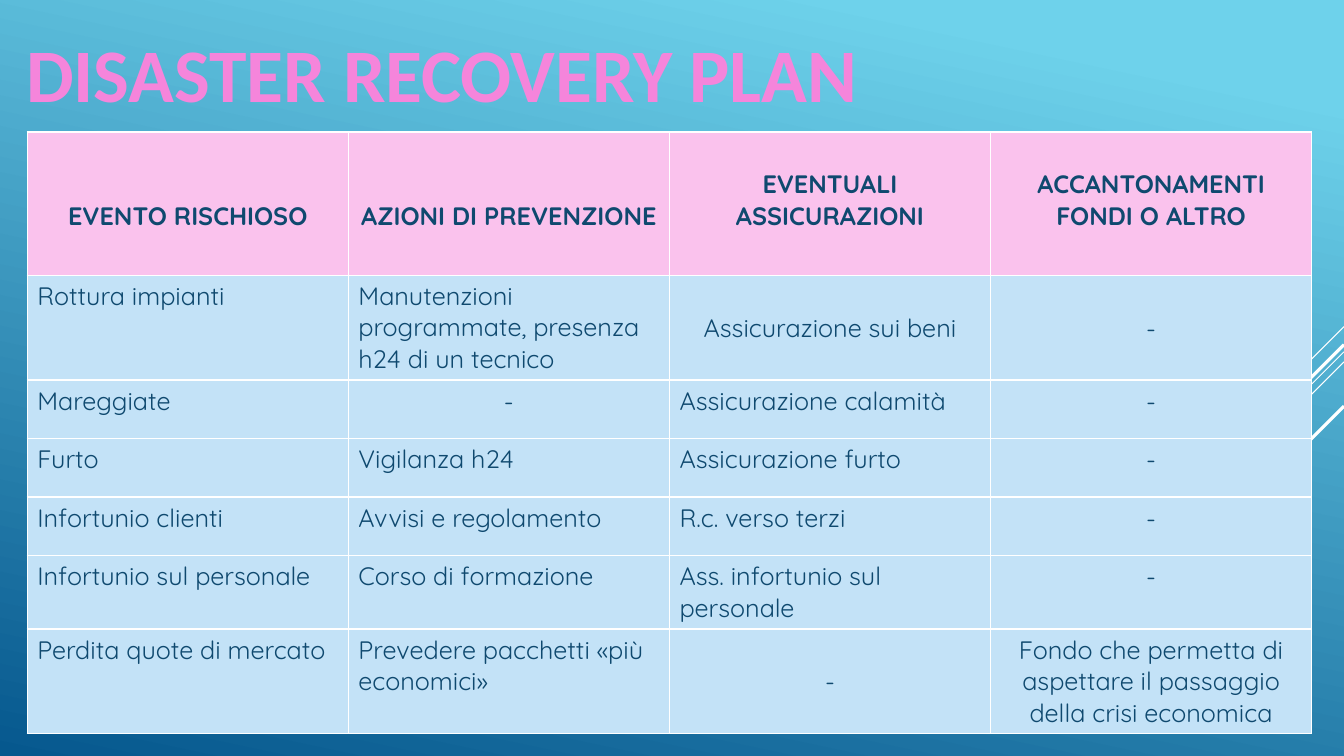
"""Build the disaster recovery plan slide."""
from lxml import etree
from pptx import Presentation, util as u
from pptx.dml.color import RGBColor
from pptx.enum import shapes, text
from pptx.oxml.ns import qn

WIDTH, HEIGHT = 13.33, 7.5
TITLE = "DISASTER RECOVERY PLAN"
HEADINGS = ["EVENTO RISCHIOSO", "AZIONI DI PREVENZIONE",
            "EVENTUALI ASSICURAZIONI", "ACCANTONAMENTI FONDI O ALTRO"]
RISKS = [
    ("Rottura impianti", "Manutenzioni programmate, presenza h24 di un tecnico",
     "Assicurazione sui beni", "-"),
    ("Mareggiate", "-", "Assicurazione calamità", "-"),
    ("Furto", "Vigilanza h24", "Assicurazione furto", "-"),
    ("Infortunio clienti", "Avvisi e regolamento", "R.c. verso terzi", "-"),
    ("Infortunio sul personale", "Corso di formazione",
     "Ass. infortunio sul personale", "-"),
    ("Perdita quote di mercato", "Prevedere pacchetti «più economici»", "-",
     "Fondo che permetta di aspettare il passaggio della crisi economica"),
]
CENTRED = {"Assicurazione sui beni", "-", RISKS[-1][-1]}
MIDDLE = {(1, 2), (1, 3), (6, 2)}
ROW_HEIGHTS = [1.42, 1.04, 0.58, 0.58, 0.58, 0.73, 1.04]
TABLE_LEFT, TABLE_TOP, TABLE_WIDTH = 0.27, 1.31, 12.74
RAYS = [(3.24, 1, 0.75), (3.49, 3.26, 0.75), (3.59, 2.07, 0.75),
        (3.42, 1.91, 2.25), (4.03, 1.39, 2.25)]
SKY = [("6ED2EB", 0.1), ("06588E", 1)]
WHITE, PINK, INK = "FFFFFF", "F585DB", "0F496F"
HEADING_FILL, RISK_FILL = "FAC2ED", "C3E2F7"


def colour(code):
    return RGBColor.from_string(code)


def style(paragraph, font_name, size, code, bold):
    font = paragraph.font
    font.name, font.size, font.bold = font_name, u.Pt(size), bold
    font.color.rgb = colour(code)


def paint_sky(slide):
    fill = slide.background.fill
    fill.gradient()
    fill.gradient_angle = 258
    for stop, (code, position) in zip(fill.gradient_stops, SKY):
        stop.color.rgb, stop.position = colour(code), position


def draw_rays(slide):
    for top, reach, weight in RAYS:
        ray = slide.shapes.add_connector(
            shapes.MSO_CONNECTOR.STRAIGHT, u.Inches(WIDTH), u.Inches(top),
            u.Inches(WIDTH - reach), u.Inches(top + reach))
        ray.line.color.rgb, ray.line.width = colour(WHITE), u.Pt(weight)
        etree.SubElement(ray._element.spPr, qn("a:effectLst"))


def add_plan(slide):
    rows = [HEADINGS] + RISKS
    plan = slide.shapes.add_table(
        len(rows), len(HEADINGS), u.Inches(TABLE_LEFT), u.Inches(TABLE_TOP),
        u.Inches(TABLE_WIDTH), u.Inches(sum(ROW_HEIGHTS))).table
    for r, entries in enumerate(rows):
        plan.rows[r].height = u.Inches(ROW_HEIGHTS[r])
        heading = r == 0
        for c, entry in enumerate(entries):
            cell = plan.cell(r, c)
            cell.text = entry
            cell.fill.solid()
            cell.fill.fore_color.rgb = colour(HEADING_FILL if heading else RISK_FILL)
            paragraph = cell.text_frame.paragraphs[0]
            style(paragraph, "Quicksand", 18, INK, heading)
            if heading:
                cell.vertical_anchor = text.MSO_ANCHOR.BOTTOM
                cell.margin_bottom = u.Inches(0.43)
            elif (r, c) in MIDDLE:
                cell.vertical_anchor = text.MSO_ANCHOR.MIDDLE
            if heading or entry in CENTRED:
                paragraph.alignment = text.PP_ALIGN.CENTER


def add_title(slide):
    frame = slide.shapes.add_textbox(
        u.Inches(0.16), u.Inches(0.22), u.Inches(8.71), u.Inches(1.01)).text_frame
    frame.word_wrap = True
    frame.text = TITLE
    style(frame.paragraphs[0], "Calibri", 54, PINK, True)


def main():
    deck = Presentation()
    deck.slide_width, deck.slide_height = u.Inches(WIDTH), u.Inches(HEIGHT)
    slide = deck.slides.add_slide(deck.slide_layouts[6])
    paint_sky(slide)
    draw_rays(slide)
    add_plan(slide)
    add_title(slide)
    deck.save("out.pptx")


if __name__ == "__main__":
    main()
